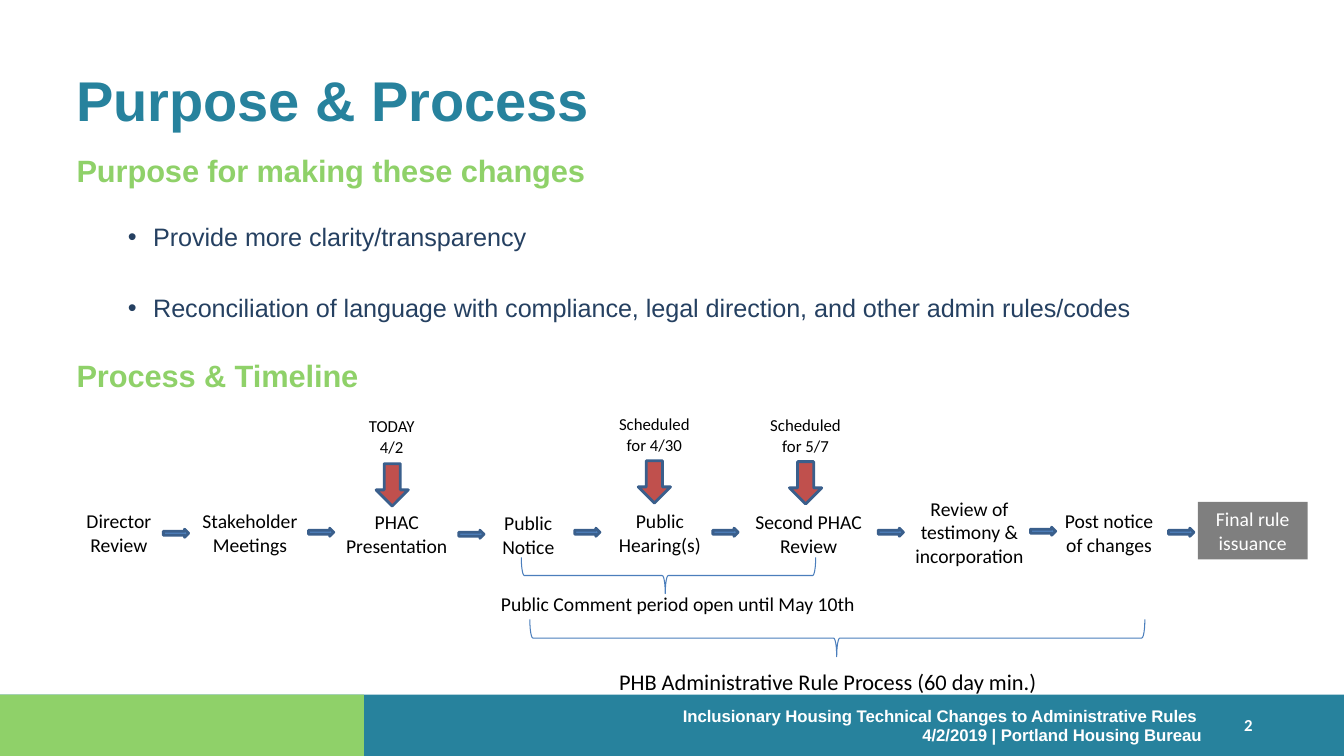
from dataclasses import dataclass

from lxml.etree import SubElement
from pptx import Presentation
from pptx.dml.color import RGBColor
from pptx.enum.shapes import MSO_SHAPE
from pptx.enum.text import MSO_ANCHOR, MSO_AUTO_SIZE, PP_ALIGN
from pptx.oxml.ns import qn
from pptx.util import Emu, Pt

PX = 9144  # one px is a hundredth of an inch

TEAL = RGBColor(0x27, 0x82, 0x9D)
GREEN = RGBColor(0x8F, 0xD1, 0x69)
NAVY = RGBColor(0x25, 0x40, 0x61)
BLUE = RGBColor(0x4F, 0x81, 0xBD)
BLUE_EDGE = RGBColor(0x3A, 0x5F, 0x8C)
BRACE_BLUE = RGBColor(0x4B, 0x7E, 0xBC)
RED = RGBColor(0xC0, 0x50, 0x4D)
BLACK = RGBColor(0, 0, 0)
WHITE = RGBColor(0xFF, 0xFF, 0xFF)

NO_MARGINS = dict(margin_left=0, margin_top=0, margin_right=0, margin_bottom=0)
BODY_MARGINS = NO_MARGINS | dict(margin_left=PX, margin_top=PX)


@dataclass(frozen=True)
class Area:
    left: int
    top: int
    width: int
    height: int

    def emu(self) -> list[Emu]:
        return [Emu(n * PX) for n in (self.left, self.top, self.width, self.height)]


@dataclass(frozen=True)
class Style:
    size: int
    color: RGBColor
    name: str = "Calibri"
    bold: bool = False
    tight: bool = False


@dataclass(frozen=True)
class Line:
    text: str
    style: Style
    before: float = 0
    spacing: float | None = None
    align: PP_ALIGN = PP_ALIGN.CENTER
    bullet: bool = False


@dataclass(frozen=True)
class Label:
    text: str
    area: Area
    style: Style


@dataclass(frozen=True)
class Mark:
    kind: MSO_SHAPE
    area: Area
    fill: RGBColor | None = None
    edge: RGBColor | None = None
    weight: float = 2
    rotation: int = 0
    adjustments: tuple[float, ...] = ()


TITLE = Style(40, TEAL, "Arial", True, True)
HEADING = Style(22, GREEN, "Arial", True, True)
BULLET = Style(18, NAVY, "Arial", False, True)
FOOTER = Style(12, WHITE, "Arial", True, True)
NUMBER = Style(12, WHITE, bold=True)
STEP = Style(14, BLACK)
FINAL = Style(14, WHITE)
DATE = Style(12, BLACK)
PROCESS = Style(16, BLACK)

BANDS = [
    Mark(MSO_SHAPE.RECTANGLE, Area(0, 689, 1333, 61), TEAL),
    Mark(MSO_SHAPE.RECTANGLE, Area(0, 689, 361, 61), GREEN),
]
BODY = [
    Line("Purpose for making these changes", HEADING, 1, align=PP_ALIGN.LEFT),
    Line("Provide more clarity/transparency", BULLET, 23, 21.7, PP_ALIGN.LEFT, True),
    Line("Reconciliation of language with compliance, legal direction, "
         "and other admin rules/codes", BULLET, 28.9, 21.7, PP_ALIGN.LEFT, True),
    Line("Process & Timeline", HEADING, 28.9, 21.7, PP_ALIGN.LEFT),
]
FOOTER_LINES = [
    Line(text, FOOTER, spacing=14.2, align=PP_ALIGN.RIGHT)
    for text in ("Inclusionary Housing Technical Changes to Administrative Rules ",
                 "4/2/2019 | Portland Housing Bureau")
]
LABELS = [
    Label("Director Review", Area(75, 500, 86, 57), STEP),
    Label("Stakeholder Meetings", Area(190, 500, 116, 57), STEP),
    Label("PHAC Presentation", Area(331, 501, 125, 57), STEP),
    Label("Public Notice", Area(480, 502, 88, 57), STEP),
    Label("Public Hearing(s)", Area(598, 500, 113, 57), STEP),
    Label("Second PHAC Review", Area(738, 501, 128, 57), STEP),
    Label("Review of testimony & incorporation", Area(894, 488, 135, 81), STEP),
    Label("Post notice of changes", Area(1040, 500, 120, 57), STEP),
    Label("TODAY\n4/2", Area(344, 408, 89, 50), DATE),
    Label("Scheduled for 4/30", Area(602, 406, 94, 50), DATE),
    Label("Scheduled for 5/7", Area(752, 407, 94, 50), DATE),
    Label("Public Comment period open until May 10th", Area(486, 582, 373, 34), STEP),
    Label("PHB Administrative Rule Process (60 day min.)", Area(542, 658, 558, 37), PROCESS),
]
STEP_ARROWS = [
    Mark(MSO_SHAPE.RIGHT_ARROW, Area(left, top, 25, 8), BLUE, BLUE_EDGE)
    for left, top in ((162, 525), (306, 524), (455, 526), (570, 524), (707, 524),
                      (871, 524), (1022, 523), (1159, 524))
]
DATE_ARROWS = [
    Mark(MSO_SHAPE.RIGHT_ARROW, Area(left, top, 42, 32), RED, BLUE_EDGE, rotation=90)
    for left, top in ((368, 465), (628, 462), (778, 463))
]
BRACES = [
    Mark(MSO_SHAPE.RIGHT_BRACE, Area(645, 425, 36, 292), None, BRACE_BLUE, 0.75, 90,
         (0.083, 0.511)),
    Mark(MSO_SHAPE.LEFT_BRACE, Area(812, 328, 37, 610), None, BRACE_BLUE, 0.75, 270,
         (0.083, 0.499)),
]


def assign(target, values: dict) -> None:
    for name, value in values.items():
        setattr(target, name, value)


def write(shape, lines: list[Line], margins: dict | None = None) -> None:
    frame = shape.text_frame
    assign(frame, dict(word_wrap=True, auto_size=MSO_AUTO_SIZE.NONE,
                       vertical_anchor=MSO_ANCHOR.TOP) | (margins or {}))
    for index, line in enumerate(lines):
        para = frame.add_paragraph() if index else frame.paragraphs[0]
        assign(para, dict(alignment=line.align, space_before=Pt(line.before)))
        if line.spacing:
            para.line_spacing = Pt(line.spacing)
        if line.bullet:
            properties = para._p.get_or_add_pPr()
            properties.set("marL", str(76 * PX))
            properties.set("indent", str(-25 * PX))
            SubElement(properties, qn("a:buFont")).set("typeface", "Arial")
            SubElement(properties, qn("a:buChar")).set("char", "•")
        span = para.add_run()
        span.text = line.text
        style = line.style
        assign(span.font, dict(name=style.name, size=Pt(style.size), bold=style.bold))
        span.font.color.rgb = style.color
        if style.tight:
            span._r.get_or_add_rPr().set("spc", "-5")


def add_text(page, area: Area, lines: list[Line], margins: dict | None = None) -> None:
    write(page.shapes.add_textbox(*area.emu()), lines, margins)


def add_mark(page, mark: Mark):
    shape = page.shapes.add_shape(mark.kind, *mark.area.emu())
    shape.shadow.inherit = False
    shape.rotation = mark.rotation
    for index, value in enumerate(mark.adjustments):
        shape.adjustments[index] = value
    if mark.fill is None:
        shape.fill.background()
    else:
        shape.fill.solid()
        shape.fill.fore_color.rgb = mark.fill
    if mark.edge is None:
        shape.line.fill.background()
    else:
        shape.line.color.rgb = mark.edge
        shape.line.width = Pt(mark.weight)
    return shape


def main() -> None:
    deck = Presentation()
    assign(deck, dict(slide_width=Emu(1333 * PX), slide_height=Emu(750 * PX)))
    page = deck.slides.add_slide(deck.slide_layouts[5])

    # Title
    title = page.shapes.title
    assign(title, dict(zip(("left", "top", "width", "height"), Area(75, 64, 751, 69).emu())))
    write(title, [Line("Purpose & Process", TITLE, 1, align=PP_ALIGN.LEFT)], BODY_MARGINS)

    # Footer
    for band in BANDS:
        add_mark(page, band)
    add_text(page, Area(525, 700, 667, 39), FOOTER_LINES, NO_MARGINS)
    add_text(page, Area(1233, 708, 20, 21),
             [Line("2", NUMBER, 0.4, align=PP_ALIGN.LEFT)], BODY_MARGINS)

    # Purpose and headings
    add_text(page, Area(75, 150, 1153, 249), BODY, BODY_MARGINS)

    # Timeline
    for mark in STEP_ARROWS + DATE_ARROWS + BRACES:
        add_mark(page, mark)
    for label in LABELS:
        add_text(page, label.area, [Line(text, label.style) for text in label.text.split("\n")])

    # Final step, half transparent
    final = add_mark(page, Mark(MSO_SHAPE.RECTANGLE, Area(1188, 498, 109, 57), BLACK))
    color = final.fill._xPr.find(qn("a:solidFill")).find(qn("a:srgbClr"))
    SubElement(color, qn("a:alpha")).set("val", "50000")
    write(final, [Line("Final rule issuance", FINAL)])

    deck.save("out.pptx")


if __name__ == "__main__":
    main()
